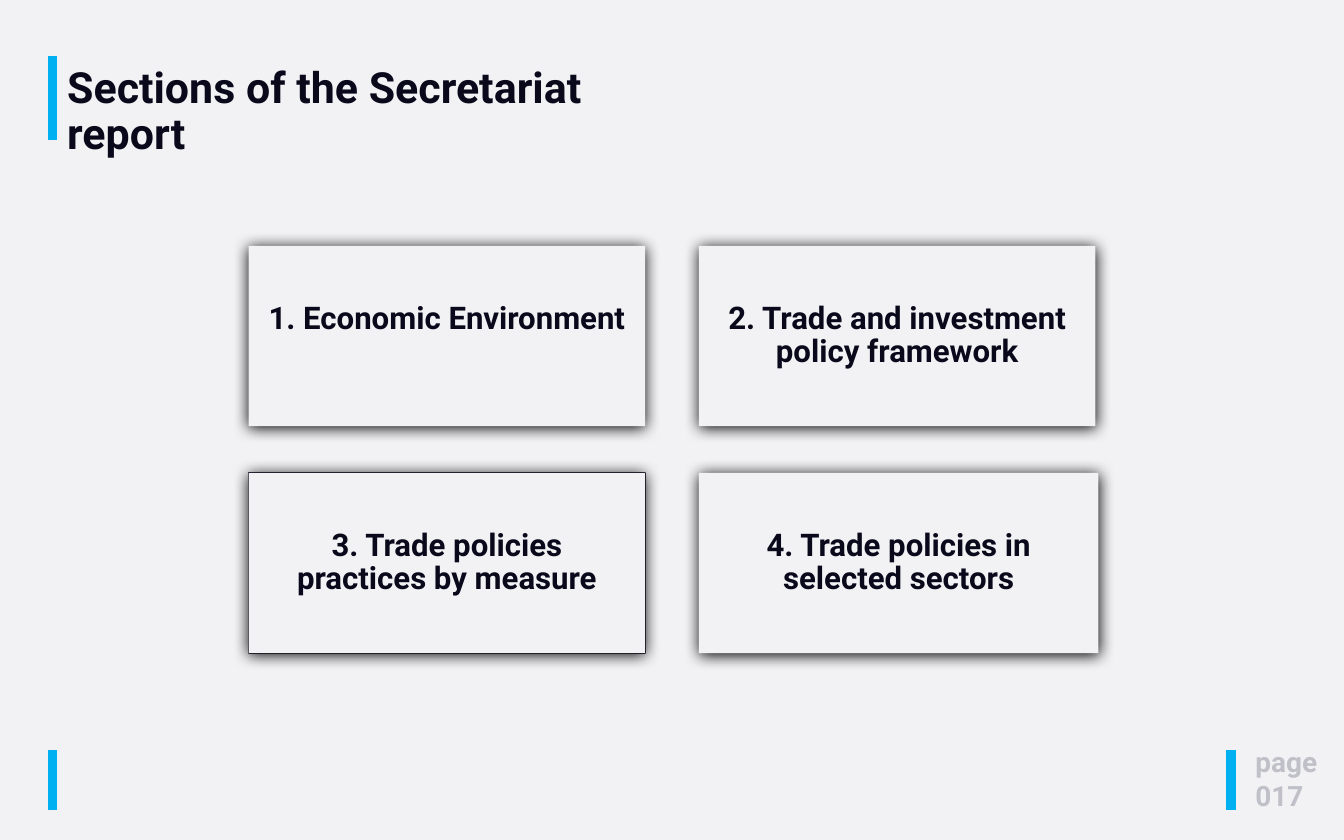
from dataclasses import dataclass

from lxml import etree
from pptx import Presentation
from pptx.dml.color import RGBColor
from pptx.enum.shapes import MSO_CONNECTOR, MSO_SHAPE
from pptx.enum.text import MSO_ANCHOR, PP_ALIGN
from pptx.oxml.ns import qn
from pptx.util import Pt

RECTANGLE = MSO_SHAPE.RECTANGLE
STRAIGHT = MSO_CONNECTOR.STRAIGHT
MIDDLE = MSO_ANCHOR.MIDDLE
CENTER = PP_ALIGN.CENTER
LEFT = PP_ALIGN.LEFT


@dataclass(frozen=True)
class Theme:
    font: str = "Roboto"
    background: RGBColor = RGBColor(0xF2, 0xF2, 0xF5)
    ink: RGBColor = RGBColor(0x0A, 0x09, 0x1B)
    accent: RGBColor = RGBColor(0x00, 0xB0, 0xF0)
    muted: RGBColor = RGBColor(0xC0, 0xC0, 0xC8)
    shadow: str = "000000"
    title_size: float = 23
    section_size: float = 16.7
    page_size: float = 15


THEME = Theme()

# Section grid, in points
GRID_LEFT, GRID_TOP = 133.2, 131.8
COLUMN_STEP, ROW_STEP = 241.2, 121.6
PANEL_WIDTH, LAST_PANEL_WIDTH, PANEL_HEIGHT = 212.4, 214, 96.5
PANEL_INSET = 9.4
LINE_HEIGHT = 17.6

SECTIONS = [
    "1. Economic Environment",
    "2. Trade and investment policy framework",
    "3. Trade policies practices by measure",
    "4. Trade policies in selected sectors",
]


def set_insets(frame, horizontal, vertical):
    frame.margin_left = frame.margin_right = Pt(horizontal)
    frame.margin_top = frame.margin_bottom = Pt(vertical)


def format_text(frame, size, color, align=LEFT, spacing=1.0):
    for paragraph in frame.paragraphs:
        paragraph.alignment = align
        paragraph.line_spacing = spacing
        for run in paragraph.runs:
            run.font.name = THEME.font
            run.font.size = Pt(size)
            run.font.bold = True
            run.font.color.rgb = color


def add_accent_bar(slide, x, top, bottom):
    bar = slide.shapes.add_connector(STRAIGHT, Pt(x), Pt(top), Pt(x), Pt(bottom))
    bar.line.color.rgb = THEME.accent
    bar.line.width = Pt(5)
    etree.SubElement(bar._element.spPr, qn("a:effectLst"))


def add_label(slide, text, left, top, width, height, size, color, spacing=1.0):
    label = slide.shapes.add_textbox(Pt(left), Pt(top), Pt(width), Pt(height))
    frame = label.text_frame
    frame.word_wrap = True
    set_insets(frame, 3.6, 2.2)
    frame.text = text
    format_text(frame, size, color, spacing=spacing)


def add_panel(slide, left, top, width):
    panel = slide.shapes.add_shape(
        RECTANGLE, Pt(left), Pt(top), Pt(width), Pt(PANEL_HEIGHT))
    panel.shadow.inherit = False
    panel.fill.solid()
    panel.fill.fore_color.rgb = THEME.background
    panel.line.fill.background()
    return panel


def add_outline(slide, left, top, width):
    outline = add_panel(slide, left, top, width)
    outline.line.color.rgb = THEME.ink
    outline.line.width = Pt(1)


def add_glow_shadow(panel):
    effects = panel._element.spPr.find(qn("a:effectLst"))
    shadow = etree.SubElement(
        effects, qn("a:outerShdw"), blurRad=str(Pt(8.5)), dist=str(Pt(1)),
        dir="5400000", algn="ctr", rotWithShape="0")
    etree.SubElement(shadow, qn("a:srgbClr"), val=THEME.shadow)


def add_section(slide, text, left, top, width):
    section = add_panel(slide, left, top, width)
    add_glow_shadow(section)
    frame = section.text_frame
    frame.word_wrap = True
    frame.vertical_anchor = MIDDLE
    set_insets(frame, PANEL_INSET, PANEL_INSET)
    frame.text = text
    format_text(frame, THEME.section_size, THEME.ink, CENTER, 0.9)
    return section


def main():
    deck = Presentation()
    deck.slide_width, deck.slide_height = Pt(720), Pt(450)
    slide = deck.slides.add_slide(deck.slide_layouts[6])
    slide.background.fill.solid()
    slide.background.fill.fore_color.rgb = THEME.background

    # Accent bars: footer left, footer right, title
    for x, top, bottom in [(28, 402, 434), (659.5, 402, 434), (28, 30, 75)]:
        add_accent_bar(slide, x, top, bottom)

    # Title
    add_label(slide, "Sections of the Secretariat report", 32.4, 33.1, 325.4, 54,
              THEME.title_size, THEME.ink, 0.9)

    # Report sections, two by two
    for index, text in enumerate(SECTIONS):
        row, column = divmod(index, 2)
        left = GRID_LEFT + column * COLUMN_STEP
        top = GRID_TOP + row * ROW_STEP
        width = LAST_PANEL_WIDTH if index == 3 else PANEL_WIDTH
        if index == 2:
            add_outline(slide, left, top, width)
        section = add_section(slide, text, left, top, width)
        if index == 0:
            # The single line aligns with the first line of its neighbour
            section.text_frame.margin_bottom = Pt(PANEL_INSET + LINE_HEIGHT)

    # Page number
    add_label(slide, "page\n017", 668.9, 396.7, 68.4, 40.3,
              THEME.page_size, THEME.muted)

    deck.save("out.pptx")


if __name__ == "__main__":
    main()
